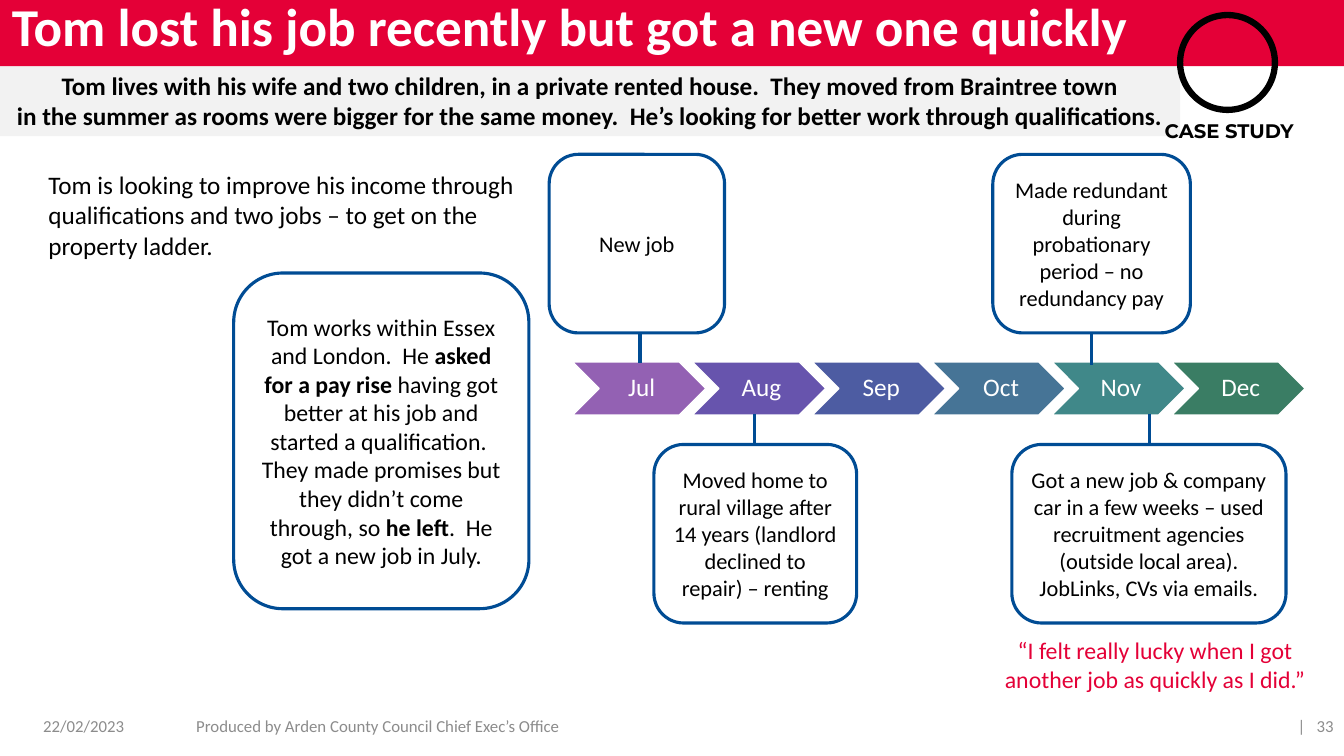
from lxml.etree import SubElement
from pptx import Presentation
from pptx.dml.color import RGBColor
from pptx.enum.shapes import MSO_CONNECTOR, MSO_SHAPE
from pptx.enum.text import MSO_ANCHOR, PP_ALIGN
from pptx.oxml.ns import qn
from pptx.util import Cm, Pt

RED, BLUE, BLACK, WHITE = "E40037", "004C94", "000000", "FFFFFF"
PALE_GREY, FOOTER_GREY = "F2F2F2", "8C8C8C"
DEFAULT_INSETS = (0.25, 0.13, 0.25, 0.13)


def paint(target, color):
    """Give a fill a solid colour, or no colour at all."""
    if color:
        target.solid()
        target.fore_color.rgb = RGBColor.from_string(color)
    else:
        target.background()


def add_box(text, place, kind=None, fill=None, line=None, width=2.25, size=16,
            color=BLACK, bold=False, font="Calibri", align=PP_ALIGN.CENTER,
            anchor=MSO_ANCHOR.MIDDLE, insets=DEFAULT_INSETS, spacing=None):
    """Add a shape, or a text box without a kind; ** in the text toggles bold."""
    place = [Cm(length) for length in place]
    if kind is None:
        box = slide.shapes.add_textbox(*place)
    else:
        box = slide.shapes.add_shape(kind, *place)
        box.shadow.inherit = False
        paint(box.fill, fill)
        paint(box.line.fill, line)
        if line:
            box.line.width = Pt(width)
    frame = box.text_frame
    frame.word_wrap = True
    frame.vertical_anchor = anchor
    (frame.margin_left, frame.margin_top,
     frame.margin_right, frame.margin_bottom) = [Cm(inset) for inset in insets]
    for index, words in enumerate(text.split("\n")):
        para = frame.add_paragraph() if index else frame.paragraphs[0]
        para.alignment = align
        para.line_spacing = spacing
        for part, piece in enumerate(words.split("**")):
            if piece:
                span = para.add_run()
                span.text = piece
                span.font.name = font
                span.font.size = Pt(size)
                span.font.bold = bold or part % 2 == 1
                span.font.color.rgb = RGBColor.from_string(color)
    return box


deck = Presentation()
deck.slide_width, deck.slide_height = Cm(33.87), Cm(19.05)
slide = deck.slides.add_slide(deck.slide_layouts[6])

# Introduction
add_box("Tom is looking to improve his income through qualifications and two jobs"
        " – to get on the property ladder.", (0.97, 4.14, 12.93, 2.57), size=18,
        align=PP_ALIGN.LEFT, anchor=MSO_ANCHOR.TOP)

# Timeline
months = [("Jul", "9361B3"), ("Aug", "6754AD"), ("Sep", "4D5CA2"),
          ("Oct", "467496"), ("Nov", "408889"), ("Dec", "3A7D64")]
for index, (month, color) in enumerate(months):
    add_box(month, (14.43 + 3.02 * index, 9.12, 3.36, 1.34), MSO_SHAPE.CHEVRON,
            fill=color, line=WHITE, width=1, size=18, color=WHITE,
            insets=(0.2, 0.08, 0.08, 0.08), spacing=0.9)

# Links between events and months
for x, start, end in [(16.13, 9.14, 8.31), (19.02, 11.3, 10.44),
                      (28.96, 11.2, 10.44), (27.51, 9.19, 8.33)]:
    link = slide.shapes.add_connector(
        MSO_CONNECTOR.STRAIGHT, Cm(x), Cm(start), Cm(x), Cm(end))
    paint(link.line.fill, BLUE)
    link.line.width = Pt(2.25)
    SubElement(link._element.spPr, qn("a:effectLst"))

# Events
events = [
    ("New job", (13.84, 3.89, 4.42, 4.5), 16),
    ("Got a new job & company car in a few weeks – used recruitment agencies "
     "(outside local area). JobLinks, CVs via emails.", (25.5, 11.2, 6.91, 4.5), 16),
    ("Made redundant during probationary period – no redundancy pay",
     (25.02, 3.89, 4.98, 4.5), 16),
    ("Tom works within Essex and London.  He **asked for a pay rise **having got "
     "better at his job and started a qualification.  They made promises but they "
     "didn’t come through, so **he left**.  He got a new job in July.",
     (5.89, 6.88, 7.44, 8.46), 17),
    ("Moved home to rural village after 14 years (landlord declined to repair)"
     " – renting", (16.48, 11.2, 5.11, 4.5), 16),
]
for text, place, size in events:
    add_box(text, place, MSO_SHAPE.ROUNDED_RECTANGLE, fill=WHITE, line=BLUE, size=size)

add_box("“I felt really lucky when I got another job as quickly as I did.”",
        (24.74, 15.9, 8.74, 1.7), size=17, color=RED, anchor=MSO_ANCHOR.TOP)

# Footer
footer = {"size": 12, "color": FOOTER_GREY}
add_box("Produced by Arden County Council Chief Exec’s Office",
        (3.81, 17.78, 11.43, 1.02), **footer)
add_box("22/02/2023", (0.84, 17.78, 7.62, 1.02), align=PP_ALIGN.LEFT, **footer)
page_number = add_box("|** **33", (26.24, 17.78, 7.62, 1.02),
                      align=PP_ALIGN.RIGHT, **footer)
gap = page_number.text_frame.paragraphs[0].runs[1]
gap.font.bold = False
gap.font._element.set("spc", "540")

# Header
add_box("Tom lives with his wife and two children, in a private rented house.  "
        "They moved from Braintree town\n"
        "in the summer as rooms were bigger for the same money.  "
        "He’s looking for better work through qualifications.",
        (0, 1.63, 29.74, 1.8), MSO_SHAPE.RECTANGLE, fill=PALE_GREY, size=18,
        bold=True, anchor=MSO_ANCHOR.TOP)
add_box("Tom lost his job recently but got a new one quickly",
        (0, -0.18, 33.87, 1.85), MSO_SHAPE.RECTANGLE, fill=RED, size=38,
        color=WHITE, bold=True, align=PP_ALIGN.LEFT, anchor=MSO_ANCHOR.TOP,
        insets=(0.3, 0, 0, 0))

# Case study badge
add_box("CASE STUDY", (28.68, 2.82, 4.6, 0.89), size=14, bold=True,
        font="Montserrat", anchor=MSO_ANCHOR.TOP, spacing=1.1)
add_box("", (29.74, 0.38, 2.39, 2.39), MSO_SHAPE.OVAL, line=BLACK, width=4.5)

deck.save("out.pptx")
